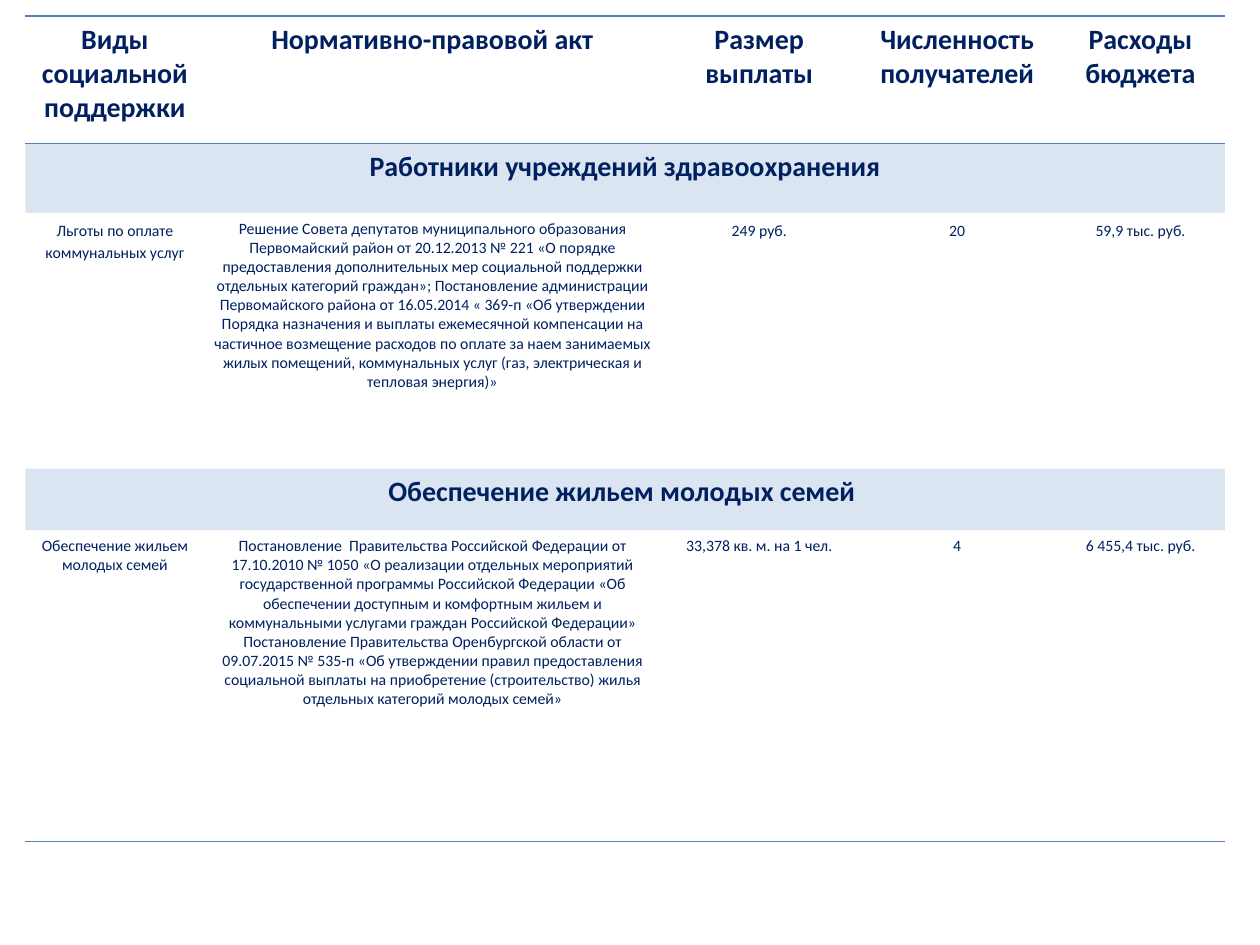
from dataclasses import dataclass

from lxml import etree
from pptx import Presentation
from pptx.dml.color import RGBColor
from pptx.enum.text import PP_ALIGN
from pptx.oxml.ns import qn
from pptx.util import Cm, Pt

CENTER = PP_ALIGN.CENTER
NO_GRID_STYLE = "{2D5ABB26-0587-4C30-8999-92F81FD0307C}"


@dataclass(frozen=True)
class Theme:
    """Colours, font and type sizes of the slide."""
    font: str = "Calibri"
    text: str = "002060"
    accent: str = "4F81BD"
    band_opacity: int = 20
    heading_size: int = 16
    body_size: int = 9
    rule_width: int = 1


THEME = Theme()
HEADING = {"size": Pt(THEME.heading_size), "bold": True}
BODY = {"size": Pt(THEME.body_size), "bold": False}
COLUMN_WIDTHS = [3.61, 9.19, 3.99, 3.99, 3.4]
ROW_HEIGHTS = [2.57, 1.4, 5.16, 1.24, 6.27]

HEADERS = ["Виды социальной поддержки", "Нормативно-правовой акт", "Размер выплаты",
           "Численность получателей", "Расходы бюджета"]
HEALTH_WORKERS = [
    "Льготы по оплате коммунальных услуг",
    "Решение Совета депутатов муниципального образования Первомайский район "
    "от 20.12.2013 № 221 «О порядке предоставления дополнительных мер социальной "
    "поддержки отдельных категорий граждан»; Постановление администрации "
    "Первомайского района от 16.05.2014 « 369-п «Об утверждении Порядка назначения "
    "и выплаты ежемесячной компенсации на частичное возмещение расходов по оплате "
    "за наем занимаемых жилых помещений, коммунальных услуг (газ, электрическая "
    "и тепловая энергия)»",
    "249 руб.", "20", "59,9 тыс. руб."]
YOUNG_FAMILIES = [
    "Обеспечение жильем молодых семей",
    "Постановление  Правительства Российской Федерации от 17.10.2010 № 1050 "
    "«О реализации отдельных мероприятий государственной программы Российской "
    "Федерации «Об обеспечении доступным и комфортным жильем и коммунальными "
    "услугами граждан Российской Федерации»\n"
    "Постановление Правительства Оренбургской области от 09.07.2015 № 535-п "
    "«Об утверждении правил предоставления социальной выплаты на приобретение "
    "(строительство) жилья отдельных категорий молодых семей»",
    "33,378 кв. м. на 1 чел.", "4", "6 455,4 тыс. руб."]


def set_attributes(target, values):
    """Set each named attribute on the target."""
    for name, value in values.items():
        setattr(target, name, value)


def add_rule(cell, edge):
    """Draw an accent line on one edge of a cell."""
    line = etree.SubElement(cell._tc.get_or_add_tcPr(), qn(f"a:{edge}"),
                            w=str(Pt(THEME.rule_width)))
    fill = etree.SubElement(line, qn("a:solidFill"))
    etree.SubElement(fill, qn("a:srgbClr"), val=THEME.accent)


def fill_band(cell):
    """Fill a cell with the translucent accent colour."""
    cell.fill.solid()
    cell.fill.fore_color.rgb = RGBColor.from_string(THEME.accent)
    color = cell._tc.tcPr.find(".//" + qn("a:solidFill") + "/" + qn("a:srgbClr"))
    etree.SubElement(color, qn("a:alpha"), val=str(THEME.band_opacity * 1000))


def write_cell(cell, text, font_values, spacing=1.0):
    """Write centred text into a cell."""
    set_attributes(cell, {"margin_left": Cm(0.19), "margin_right": Cm(0.19),
                          "margin_top": Cm(0.13), "margin_bottom": Cm(0.13)})
    cell.text = text
    for paragraph in cell.text_frame.paragraphs:
        set_attributes(paragraph, {"alignment": CENTER, "line_spacing": spacing})
        for run in paragraph.runs:
            set_attributes(run.font, {"name": THEME.font, **font_values})
            run.font.color.rgb = RGBColor.from_string(THEME.text)


def write_row(table, row, texts, font_values, spacings, edges=()):
    """Write a row of unfilled cells with rules on the given edges."""
    for column, (text, spacing) in enumerate(zip(texts, spacings)):
        cell = table.cell(row, column)
        for edge in edges:
            add_rule(cell, edge)
        cell.fill.background()
        write_cell(cell, text, font_values, spacing)


def write_band(table, row, text):
    """Write a section heading across the whole table width."""
    cell = table.cell(row, 0)
    cell.merge(table.cell(row, len(COLUMN_WIDTHS) - 1))
    fill_band(cell)
    write_cell(cell, text, HEADING)


def add_plain_table(slide):
    """Add the sized table without banding or grid."""
    frame = slide.shapes.add_table(len(ROW_HEIGHTS), len(COLUMN_WIDTHS), Cm(0.51), Cm(0.32),
                                   Cm(sum(COLUMN_WIDTHS)), Cm(sum(ROW_HEIGHTS)))
    table = frame.table
    set_attributes(table, {"first_row": False, "horz_banding": False})
    table._tbl.tblPr.find(qn("a:tableStyleId")).text = NO_GRID_STYLE
    for column, width in zip(table.columns, COLUMN_WIDTHS):
        column.width = Cm(width)
    for row, height in zip(table.rows, ROW_HEIGHTS):
        row.height = Cm(height)
    return table


def main():
    """Build and save the slide."""
    presentation = Presentation()
    set_attributes(presentation, {"slide_width": Cm(25.4), "slide_height": Cm(19.05)})
    slide = presentation.slides.add_slide(presentation.slide_layouts[6])
    table = add_plain_table(slide)
    single = [1.0] * len(COLUMN_WIDTHS)
    write_row(table, 0, HEADERS, HEADING, single, ("lnT", "lnB"))
    write_band(table, 1, "Работники учреждений здравоохранения")
    write_row(table, 2, HEALTH_WORKERS, BODY, [1.15, 1.0, 1.15, 1.15, 1.15])
    write_band(table, 3, "Обеспечение жильем молодых семей ")
    write_row(table, 4, YOUNG_FAMILIES, BODY, single, ("lnB",))
    presentation.save("out.pptx")


if __name__ == "__main__":
    main()
